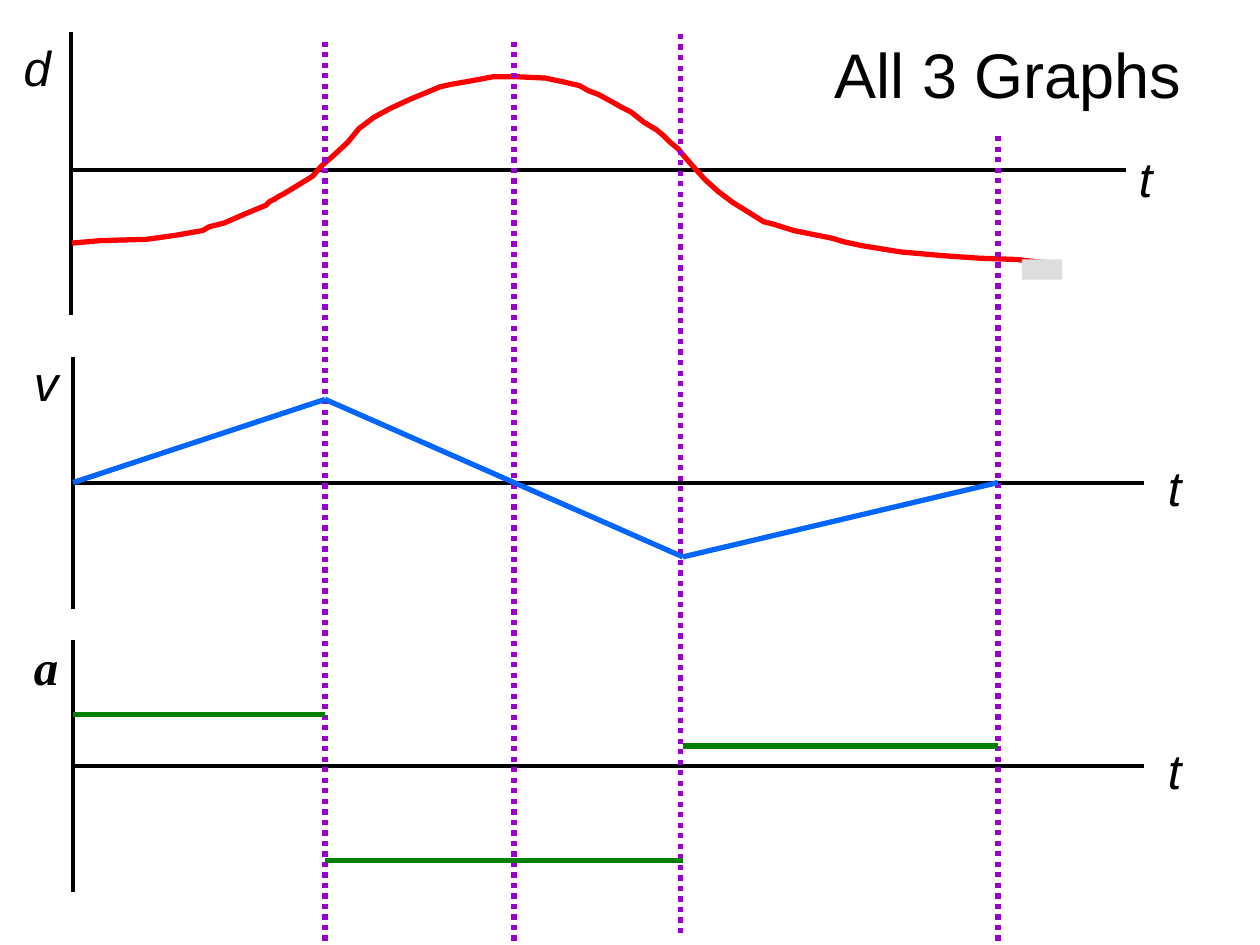
from pptx import Presentation
from pptx.dml.color import RGBColor
from pptx.enum.dml import MSO_LINE
from pptx.enum.shapes import MSO_CONNECTOR as LINK, MSO_SHAPE as SHAPE
from pptx.enum.text import MSO_ANCHOR as ANCHOR, MSO_AUTO_SIZE as FIT, PP_ALIGN as ALIGN
from pptx.oxml.ns import qn
from pptx.util import Inches, Pt
from lxml.etree import SubElement

BLACK = RGBColor(0x00, 0x00, 0x00)
RED = RGBColor(0xFF, 0x00, 0x00)
BLUE = RGBColor(0x00, 0x66, 0xFF)
GREEN = RGBColor(0x00, 0x80, 0x00)
PURPLE = RGBColor(0x99, 0x00, 0xCC)
GREY = RGBColor(0xDD, 0xDD, 0xDD)

TITLE = {"name": "Arial", "size": Pt(36)}
LABEL = {"name": "Arial", "size": Pt(28), "italic": True}
BOLD = {**LABEL, "name": "Times New Roman", "bold": True}

# Axis left, top, bottom; time axis height and right end
AXES = [(0.56, 0.25, 2.5, 1.35, 8.94),
        (0.58, 2.83, 4.83, 3.83, 9.08),
        (0.58, 5.08, 7.08, 6.08, 9.08)]
LABELS = [("d", 0.09, 0.25, LABEL), ("t", 8.94, 1.13, LABEL),
          ("v", 0.17, 2.75, LABEL), ("t", 9.17, 3.58, LABEL),
          ("a", 0.17, 5, BOLD), ("t", 9.17, 5.83, LABEL)]
# Time marks: x, top, bottom
MARKS = [(2.58, 0.33, 7.5), (4.08, 0.33, 7.5), (5.4, 0.27, 7.44), (7.92, 1.08, 7.5)]
SPEED = [(0.58, 3.83), (2.58, 3.17), (5.42, 4.42), (7.92, 3.83)]
ACCEL = [5.67, 6.83, 5.92]
CURVE = [(0.57, 1.93), (0.8, 1.91), (1.16, 1.9), (1.38, 1.87), (1.61, 1.83),
         (1.66, 1.8), (1.78, 1.77), (1.94, 1.7), (2.11, 1.63), (2.14, 1.6),
         (2.18, 1.58), (2.21, 1.56), (2.25, 1.54), (2.48, 1.4), (2.55, 1.32),
         (2.63, 1.25), (2.76, 1.13), (2.85, 1.02), (2.97, 0.93), (3.1, 0.86),
         (3.25, 0.79), (3.42, 0.72), (3.49, 0.69), (3.58, 0.67), (3.75, 0.64),
         (3.91, 0.61), (4.12, 0.61), (4.33, 0.62), (4.47, 0.65), (4.6, 0.68),
         (4.67, 0.72), (4.75, 0.75), (4.86, 0.81), (4.93, 0.85), (5.01, 0.89),
         (5.11, 0.97), (5.21, 1.03), (5.27, 1.08), (5.32, 1.13), (5.38, 1.18),
         (5.43, 1.24), (5.5, 1.32), (5.6, 1.43), (5.7, 1.52), (5.82, 1.61),
         (5.95, 1.69), (6.06, 1.76), (6.14, 1.78), (6.3, 1.83), (6.6, 1.89),
         (6.7, 1.92), (6.84, 1.95), (7.15, 2), (7.49, 2.03), (7.78, 2.05),
         (8.07, 2.06), (8.24, 2.08), (8.4, 2.09)]


def style(obj, form):
    for key, val in form.items():
        setattr(obj, key, val)


def add_line(slide, start, end, color, width=3, dash=None):
    ends = [Inches(n) for n in (*start, *end)]
    line = slide.shapes.add_connector(LINK.STRAIGHT, *ends)
    line.line.color.rgb = color
    style(line.line, {"width": Pt(width), "dash_style": dash})
    SubElement(line._element.spPr, qn("a:effectLst"))


def add_path(slide, points, color):
    pts = [(Inches(x), Inches(y)) for x, y in points]
    pen = slide.shapes.build_freeform(*pts[0])
    pen.add_line_segments(pts[1:], close=False)
    path = pen.convert_to_shape()
    path.shadow.inherit = False
    path.fill.background()
    path.line.color.rgb = color
    path.line.width = Pt(3)


def add_block(slide, x, y, w, h, color):
    block = slide.shapes.add_shape(SHAPE.RECTANGLE, *map(Inches, (x, y, w, h)))
    block.shadow.inherit = False
    block.fill.solid()
    block.fill.fore_color.rgb = color
    block.line.fill.background()


def set_text(frame, text, form):
    para = frame.paragraphs[0]
    run = para.add_run()
    run.text = text
    style(run.font, form)
    run.font.color.rgb = BLACK
    return para


def add_label(slide, text, x, y, form):
    box = slide.shapes.add_textbox(*map(Inches, (x, y, 0.4, 0.57)))
    style(box.text_frame, {"word_wrap": False, "auto_size": FIT.SHAPE_TO_FIT_TEXT})
    set_text(box.text_frame, text, form).alignment = ALIGN.LEFT


def add_title(slide, text):
    title = slide.shapes.title
    style(title, {"left": Inches(6.5), "top": Inches(0.17),
                  "width": Inches(3), "height": Inches(0.83)})
    style(title.text_frame, {"word_wrap": True, "auto_size": FIT.NONE,
                             "vertical_anchor": ANCHOR.MIDDLE})
    set_text(title.text_frame, text, TITLE).alignment = ALIGN.CENTER


def main():
    deck = Presentation()
    style(deck, {"slide_width": Inches(10), "slide_height": Inches(7.5)})
    slide = deck.slides.add_slide(deck.slide_layouts[5])
    add_title(slide, "All 3 Graphs")
    for left, top, low, mid, right in AXES:
        add_line(slide, (left, mid), (right, mid), BLACK, 2.25)
        add_line(slide, (left, top), (left, low), BLACK, 2.25)
    for label in LABELS:
        add_label(slide, *label)
    add_path(slide, CURVE, RED)
    add_block(slide, 8.11, 2.06, 0.32, 0.16, GREY)
    for x, top, low in MARKS:
        add_line(slide, (x, top), (x, low), PURPLE, dash=MSO_LINE.ROUND_DOT)
    for start, end, level in zip(SPEED, SPEED[1:], ACCEL):
        add_line(slide, start, end, BLUE)
        add_line(slide, (start[0], level), (end[0], level), GREEN)
    deck.save("out.pptx")


if __name__ == "__main__":
    main()
